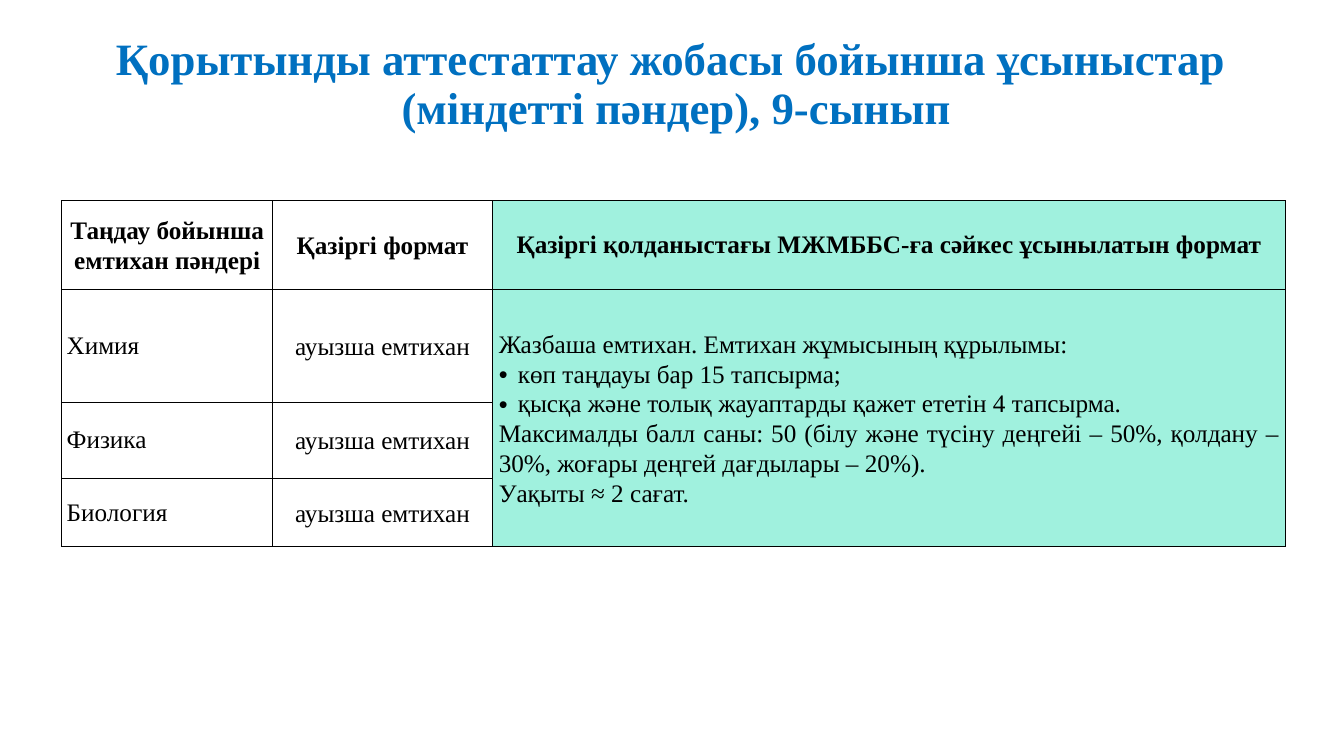
from dataclasses import dataclass

from lxml import etree
from pptx import Presentation
from pptx.dml.color import RGBColor
from pptx.enum.text import MSO_ANCHOR, MSO_AUTO_SIZE, PP_ALIGN
from pptx.oxml.ns import qn
from pptx.util import Cm, Pt

LEFT, CENTER, JUSTIFY = PP_ALIGN.LEFT, PP_ALIGN.CENTER, PP_ALIGN.JUSTIFY
TOP, MIDDLE = MSO_ANCHOR.TOP, MSO_ANCHOR.MIDDLE
NO_AUTOFIT = MSO_AUTO_SIZE.NONE


@dataclass(frozen=True)
class Theme:
    font: str = "Times New Roman"
    title_color: str = "0070C0"
    text_color: str = "000000"
    border_color: str = "000000"
    accent_fill: str = "A0F1DE"
    title_size: int = 32
    table_size: int = 18
    border_width: int = 1
    title_spacing: float = 0.9
    table_spacing: float = 1.07


@dataclass(frozen=True)
class Para:
    text: str
    align: int = LEFT
    bold: bool = False
    spacing: float = Theme.table_spacing
    bullet: bool = False


def set_attrs(obj, values):
    for name, value in values.items():
        setattr(obj, name, value)


class SlideBuilder:
    def __init__(self, prs, theme):
        self.theme = theme
        self.slide = prs.slides.add_slide(prs.slide_layouts[5])

    def set_para(self, p, para, size, color):
        set_attrs(p, {"alignment": para.align, "line_spacing": para.spacing,
                      "space_before": Pt(0), "space_after": Pt(0)})
        p.text = para.text
        for r in p.runs:
            set_attrs(r.font, {"name": self.theme.font, "size": Pt(size),
                               "bold": para.bold})
            r.font.color.rgb = RGBColor.from_string(color)
        if para.bullet:
            self.add_bullet(p)

    def add_bullet(self, p):
        indent = Cm(0.48)
        pPr = p._p.get_or_add_pPr()
        pPr.set("marL", str(indent))
        pPr.set("indent", str(-indent))
        etree.SubElement(pPr, qn("a:buFont"), typeface="Arial")
        etree.SubElement(pPr, qn("a:buChar"), char="•")

    def add_borders(self, cell):
        tcPr = cell._tc.get_or_add_tcPr()
        width = str(Pt(self.theme.border_width))
        for side in ("a:lnL", "a:lnR", "a:lnT", "a:lnB"):
            ln = etree.SubElement(tcPr, qn(side), w=width)
            fill = etree.SubElement(ln, qn("a:solidFill"))
            etree.SubElement(fill, qn("a:srgbClr"), val=self.theme.border_color)

    def title(self, text, left, top, width, height):
        sp = self.slide.shapes.title
        set_attrs(sp, {"left": Cm(left), "top": Cm(top),
                       "width": Cm(width), "height": Cm(height)})
        tf = sp.text_frame
        set_attrs(tf, {"vertical_anchor": TOP, "word_wrap": True,
                       "auto_size": NO_AUTOFIT})
        para = Para(text, CENTER, True, self.theme.title_spacing)
        self.set_para(tf.paragraphs[0], para, self.theme.title_size,
                      self.theme.title_color)

    def table(self, left, top, col_widths, row_heights):
        """Add a bordered table whose last column is tinted."""
        frame = self.slide.shapes.add_table(
            len(row_heights), len(col_widths), Cm(left), Cm(top),
            Cm(sum(col_widths)), Cm(sum(row_heights)))
        table = frame.table
        set_attrs(table, {"first_row": False, "horz_banding": False})
        for col, width in zip(table.columns, col_widths):
            col.width = Cm(width)
        for row, height in zip(table.rows, row_heights):
            row.height = Cm(height)
            for cell in row.cells:
                self.add_borders(cell)
                cell.fill.background()
            cell.fill.solid()
            cell.fill.fore_color.rgb = RGBColor.from_string(self.theme.accent_fill)
        return table

    def fill_cell(self, cell, paras, margin=0.16):
        set_attrs(cell, {"vertical_anchor": MIDDLE,
                         "margin_left": Cm(margin), "margin_right": Cm(margin),
                         "margin_top": 0, "margin_bottom": 0})
        tf = cell.text_frame
        for i, para in enumerate(paras):
            p = tf.add_paragraph() if i else tf.paragraphs[0]
            self.set_para(p, para, self.theme.table_size, self.theme.text_color)


TITLE = "Қорытынды аттестаттау жобасы бойынша ұсыныстар \v(міндетті пәндер), 9-сынып"
HEADERS = [
    Para("Таңдау бойынша емтихан пәндері", CENTER, True),
    Para("Қазіргі формат", CENTER, True),
    Para("Қазіргі қолданыстағы МЖМББС-ға сәйкес ұсынылатын формат", CENTER, True, 1.0),
]
SUBJECTS = ["Химия", "Физика", "Биология"]
CURRENT_FORMAT = Para("ауызша емтихан", CENTER)
PROPOSED_FORMAT = [
    Para("Жазбаша емтихан. Емтихан жұмысының құрылымы:"),
    Para("көп таңдауы бар 15 тапсырма;", bullet=True),
    Para("қысқа және толық жауаптарды қажет ететін 4 тапсырма.", bullet=True),
    Para("Максималды балл саны: 50 (білу және түсіну деңгейі – 50%, қолдану – 30%, "
         "жоғары деңгей дағдылары – 20%).", JUSTIFY),
    Para("Уақыты ≈ 2 сағат.", JUSTIFY),
]


def main():
    prs = Presentation()
    set_attrs(prs, {"slide_width": Cm(33.87), "slide_height": Cm(19.05)})
    s = SlideBuilder(prs, Theme())
    s.title(TITLE, 1.12, 0.81, 31.85, 1.55)

    table = s.table(1.56, 5.06, [5.31, 5.54, 19.99], [2.24, 2.84, 1.91, 1.73])
    for col, header in enumerate(HEADERS):
        s.fill_cell(table.cell(0, col), [header])
    for row, subject in enumerate(SUBJECTS, start=1):
        s.fill_cell(table.cell(row, 0), [Para(subject, spacing=1.0)], margin=0.12)
        s.fill_cell(table.cell(row, 1), [CURRENT_FORMAT])
    proposed = table.cell(1, 2)
    proposed.merge(table.cell(len(SUBJECTS), 2))
    s.fill_cell(proposed, PROPOSED_FORMAT)

    prs.save("out.pptx")


if __name__ == "__main__":
    main()
